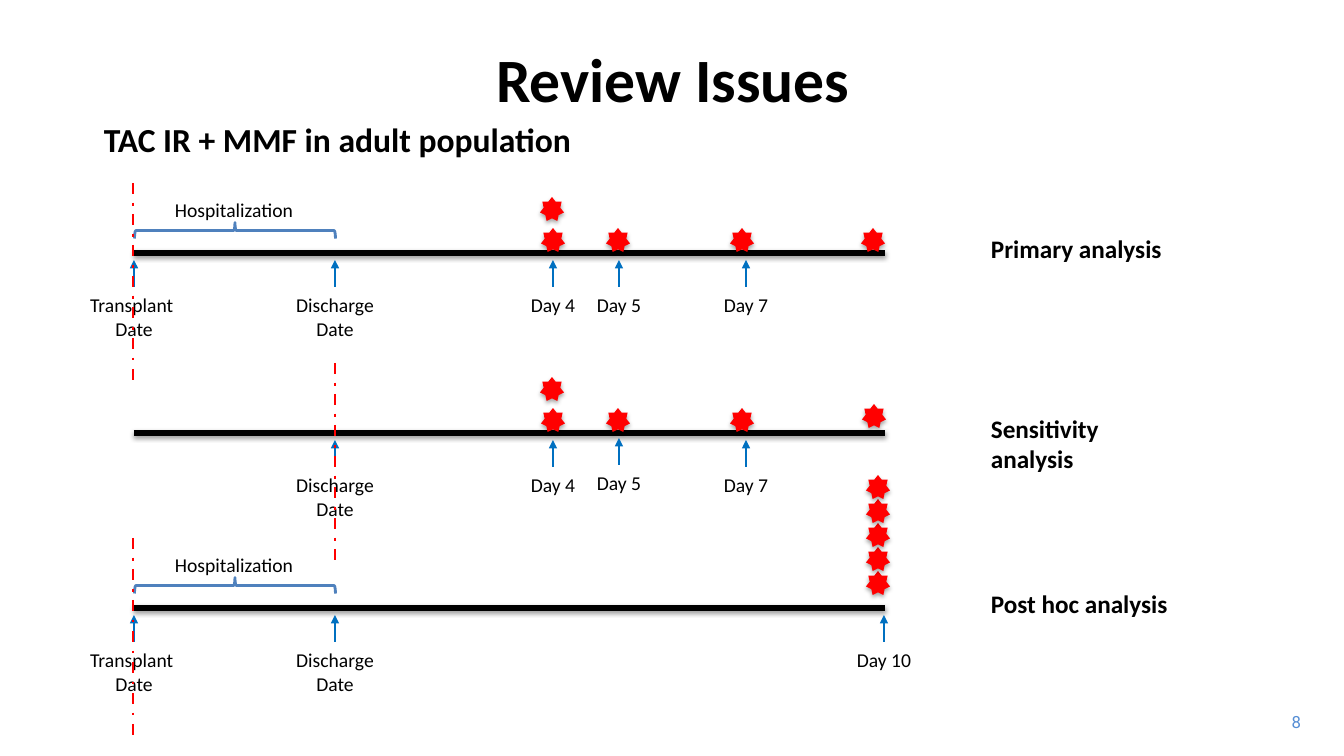
from lxml.etree import SubElement
from pptx import Presentation
from pptx.dml.color import RGBColor
from pptx.enum.dml import MSO_LINE
from pptx.enum.shapes import MSO_CONNECTOR, MSO_SHAPE
from pptx.enum.text import MSO_ANCHOR, MSO_AUTO_SIZE, PP_ALIGN
from pptx.oxml import parse_xml
from pptx.oxml.ns import nsdecls, qn
from pptx.util import Pt

PX = 914400 / 100.8
BLACK, RED, BLUE = "000000", "FF0000", "0070C0"
LEFT, MID, RIGHT = PP_ALIGN.LEFT, PP_ALIGN.CENTER, PP_ALIGN.RIGHT
SHADE = (
    f'<a:outerShdw {nsdecls("a")} blurRad="39370" dist="%d" dir="5400000" rotWithShape="0">'
    '<a:srgbClr val="000000"><a:alpha val="%d"/></a:srgbClr></a:outerShdw>'
)

deck = Presentation()
deck.slide_width, deck.slide_height = round(1344 * PX), round(756 * PX)
slide = deck.slides.add_slide(deck.slide_layouts[5])
shapes = slide.shapes


def write(box, text, size, bold=False, align=LEFT, color=BLACK, face="Calibri"):
    frame = box.text_frame
    frame.text = text
    look = {"size": Pt(size), "bold": bold, "name": face}
    for para in frame.paragraphs:
        para.alignment = align
        for key, value in look.items():
            setattr(para.font, key, value)
        para.font.color.rgb = RGBColor.from_string(color)


def link(x1, y1, x2, y2, color, width):
    ends = [round(v * PX) for v in (x1, y1, x2, y2)]
    line = shapes.add_connector(MSO_CONNECTOR.STRAIGHT, *ends)
    line.line.color.rgb = RGBColor.from_string(color)
    line.line.width = Pt(width)
    SubElement(line._element.spPr, qn("a:effectLst"))
    return line


title = shapes.title
place = {"left": 204, "top": 27, "width": 938, "height": 102}
for key, value in place.items():
    setattr(title, key, round(value * PX))
write(title, "Review Issues", 44, True, MID)
title.text_frame.vertical_anchor = MSO_ANCHOR.MIDDLE
title.text_frame.auto_size = MSO_AUTO_SIZE.NONE

START, LEAVE, END = 134, 335, 885
first = (START, 0, 108, "Transplant \nDate")
leave = (LEAVE, 0, 98, "Discharge\nDate")
four, seven = (553, 0, 66, "Day 4"), (746, 0, 66, "Day 7")
common = [(541, -25), (606, -25), (730, -25), (540, -56)]
rows = [
    (253, "Primary analysis", 133, True,
     [first, leave, four, (619, 0, 66, "Day 5"), seven],
     common + [(861, -25)]),
    (433, "Sensitivity analysis", LEAVE, False,
     [leave, four, (619, -2, 66, "Day 5"), seven],
     common + [(862, -29)]),
    (608, "Post hoc analysis", 133, True,
     [first, leave, (884, 0, 76, "Day 10")],
     [(866, -37 - 24 * step) for step in range(5)]),
]

texts = [
    (94, 114, 492, 50, "TAC IR + MMF in adult population", 24, True),
    (1270, 707, 41, 30, "8", 12, False, RIGHT, "558ED5", "Roboto"),
]
for base, name, cut, stay, marks, stars in rows:
    axis = link(START, base, END, base, BLACK, 4.5)
    axis._element.spPr.find(qn("a:effectLst")).append(parse_xml(SHADE % (20320, 38000)))

    for x, shift, wide, text in marks:
        y = base + shift
        arrow = link(x, y + 34, x, y + 7, BLUE, 2)
        SubElement(arrow.line._get_or_add_ln(), qn("a:tailEnd"), type="triangle")
        high = 34 + 23 * text.count("\n")
        texts.append((x - wide // 2, y + 35, wide, high, text, 14, False, MID))

    if stay:
        spot = [round(v * PX) for v in (227, base - 123, 16, 201)]
        brace = shapes.add_shape(MSO_SHAPE.RIGHT_BRACE, *spot)
        brace.rotation = 270
        brace.shadow.inherit = False
        brace.fill.background()
        brace.line.color.rgb = RGBColor.from_string("4F81BD")
        brace.line.width = Pt(2)
        texts.append((165, base - 60, 140, 34, "Hospitalization", 14))

    for x, rise in stars:
        spot = [round(v * PX) for v in (x, base + rise, 24, 24)]
        star = shapes.add_shape(MSO_SHAPE.STAR_7_POINT, *spot)
        star.fill.solid()
        star.fill.fore_color.rgb = RGBColor.from_string(RED)
        star.line.fill.background()
        star.shadow.inherit = False
        star._element.spPr.find(qn("a:effectLst")).append(parse_xml(SHADE % (22860, 35000)))

    texts.append((981, base - 25, 210, 40, name, 18, True))

for x, y, wide, high, *words in texts:
    box = shapes.add_textbox(*[round(v * PX) for v in (x, y, wide, high)])
    box.text_frame.word_wrap = False
    box.text_frame.auto_size = MSO_AUTO_SIZE.SHAPE_TO_FIT_TEXT
    write(box, *words)

for base, name, cut, *rest in rows:
    dash = link(cut, base - 70, cut, base + 131, RED, 2)
    dash.line.dash_style = MSO_LINE.DASH_DOT

deck.save("out.pptx")
